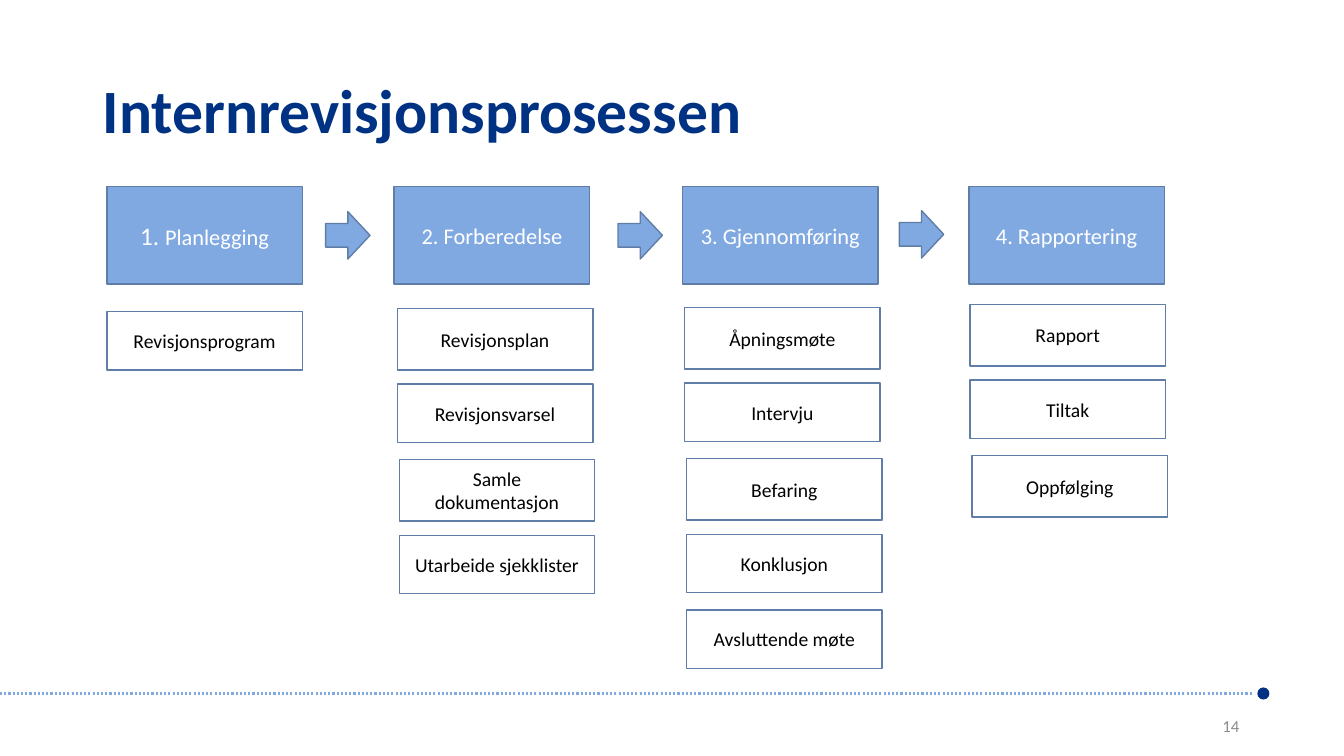
from dataclasses import dataclass

from lxml import etree
from pptx import Presentation
from pptx.dml.color import RGBColor
from pptx.enum.dml import MSO_LINE
from pptx.enum.shapes import MSO_CONNECTOR, MSO_SHAPE
from pptx.enum.text import MSO_ANCHOR, PP_ALIGN
from pptx.oxml.ns import qn
from pptx.util import Pt

RECTANGLE, ARROW, OVAL = MSO_SHAPE.RECTANGLE, MSO_SHAPE.RIGHT_ARROW, MSO_SHAPE.OVAL
STRAIGHT, DOTTED = MSO_CONNECTOR.STRAIGHT, MSO_LINE.ROUND_DOT
MIDDLE = MSO_ANCHOR.MIDDLE
LEFT, CENTER, RIGHT = PP_ALIGN.LEFT, PP_ALIGN.CENTER, PP_ALIGN.RIGHT


@dataclass(frozen=True)
class Theme:
    font: str = "Calibri"
    navy: str = "003283"
    blue: str = "81A9E1"
    outline: str = "5F7DA6"
    white: str = "FFFFFF"
    black: str = "000000"
    gray: str = "8C8C8C"
    title_size: int = 44
    number_size: int = 18
    stage_size: int = 16
    step_size: int = 14
    page_size: int = 12


THEME = Theme()

# Content: lengths are px, 100 to the inch
TITLE = "Internrevisjonsprosessen"
PAGE_NUMBER = "14"
TALL, SHORT = 61, 58
STAGES = [
    {"runs": [("1. ", THEME.number_size), ("Planlegging", THEME.stage_size)],
     "left": 106, "steps_at": (106, 309),
     "steps": [("Revisjonsprogram", SHORT)]},
    {"runs": [("2. Forberedelse", THEME.stage_size)],
     "left": 391, "steps_at": (394, 306),
     "steps": [("Revisjonsplan", TALL), ("Revisjonsvarsel", SHORT),
               ("Samle dokumentasjon", TALL), ("Utarbeide sjekklister", SHORT)]},
    {"runs": [("3. Gjennomføring", THEME.stage_size)],
     "left": 677, "steps_at": (679, 305),
     "steps": [("Åpningsmøte", TALL), ("Intervju", SHORT), ("Befaring", TALL),
               ("Konklusjon", SHORT), ("Avsluttende møte", SHORT)]},
    {"runs": [("4. Rapportering", THEME.stage_size)],
     "left": 961, "steps_at": (962, 302),
     "steps": [("Rapport", TALL), ("Tiltak", SHORT), ("Oppfølging", TALL)]},
]
ARROWS = [(323, 210), (613, 210), (892, 209)]

# Layout
SCALE = 9144
SLIDE_SIZE = (1333, 750)
BOX_WIDTH = 194
STAGE_TOP, STAGE_HEIGHT = 185, 97
ARROW_SIZE = (44, 47)
STEP_PITCH, LOWER_SHIFT = 75, 2
RULE_Y, RULE_END = 688, 1242
DOT_LEFT, DOT_SIZE = 1247, 12


def emu(*lengths):
    return [round(length * SCALE) for length in lengths]


def write(shape, runs, color, alignment, bold=False, line_spacing=None):
    frame = shape.text_frame
    frame.word_wrap = True
    frame.vertical_anchor = MIDDLE
    paragraph = frame.paragraphs[0]
    paragraph.alignment = alignment
    if line_spacing:
        paragraph.line_spacing = line_spacing
    for text, size in runs:
        run = paragraph.add_run()
        run.text = text
        run.font.name = THEME.font
        run.font.size = Pt(size)
        run.font.bold = bold
        run.font.color.rgb = RGBColor.from_string(color)


def add_box(slide, kind, box, fill, outline=None):
    shape = slide.shapes.add_shape(kind, *emu(*box))
    shape.shadow.inherit = False
    shape.fill.solid()
    shape.fill.fore_color.rgb = RGBColor.from_string(fill)
    if outline:
        shape.line.color.rgb = RGBColor.from_string(outline)
        shape.line.width = Pt(1)
    else:
        shape.line.fill.background()
    return shape


def add_footer(slide):
    rule = slide.shapes.add_connector(STRAIGHT, *emu(0, RULE_Y, RULE_END, RULE_Y))
    rule.line.color.rgb = RGBColor.from_string(THEME.blue)
    rule.line.width = Pt(1.5)
    rule.line.dash_style = DOTTED
    etree.SubElement(rule._element.spPr, qn("a:effectLst"))
    dot_box = (DOT_LEFT, RULE_Y - DOT_SIZE // 2, DOT_SIZE, DOT_SIZE)
    add_box(slide, OVAL, dot_box, THEME.navy)
    page = slide.shapes.add_textbox(*emu(1176, 700, 63, 40))
    write(page, [(PAGE_NUMBER, THEME.page_size)], THEME.gray, RIGHT)


def add_stage(slide, stage):
    header_box = (stage["left"], STAGE_TOP, BOX_WIDTH, STAGE_HEIGHT)
    header = add_box(slide, RECTANGLE, header_box, THEME.blue, THEME.outline)
    write(header, stage["runs"], THEME.white, CENTER)
    left, top = stage["steps_at"]
    for row, (text, height) in enumerate(stage["steps"]):
        # Steps from the third row down sit slightly to the right
        step_left = left + (LOWER_SHIFT if row > 1 else 0)
        step_box = (step_left, top + row * STEP_PITCH, BOX_WIDTH, height)
        step = add_box(slide, RECTANGLE, step_box, THEME.white, THEME.outline)
        write(step, [(text, THEME.step_size)], THEME.black, CENTER)


def main():
    presentation = Presentation()
    presentation.slide_width, presentation.slide_height = emu(*SLIDE_SIZE)
    slide = presentation.slides.add_slide(presentation.slide_layouts[6])

    # Title
    title = slide.shapes.add_textbox(*emu(92, 40, 1150, 145))
    write(title, [(TITLE, THEME.title_size)], THEME.navy, LEFT, bold=True, line_spacing=0.9)

    # Stages with their steps, and the arrows between them
    for stage in STAGES:
        add_stage(slide, stage)
    for position in ARROWS:
        add_box(slide, ARROW, position + ARROW_SIZE, THEME.blue, THEME.outline)

    add_footer(slide)
    presentation.save("out.pptx")


if __name__ == "__main__":
    main()
